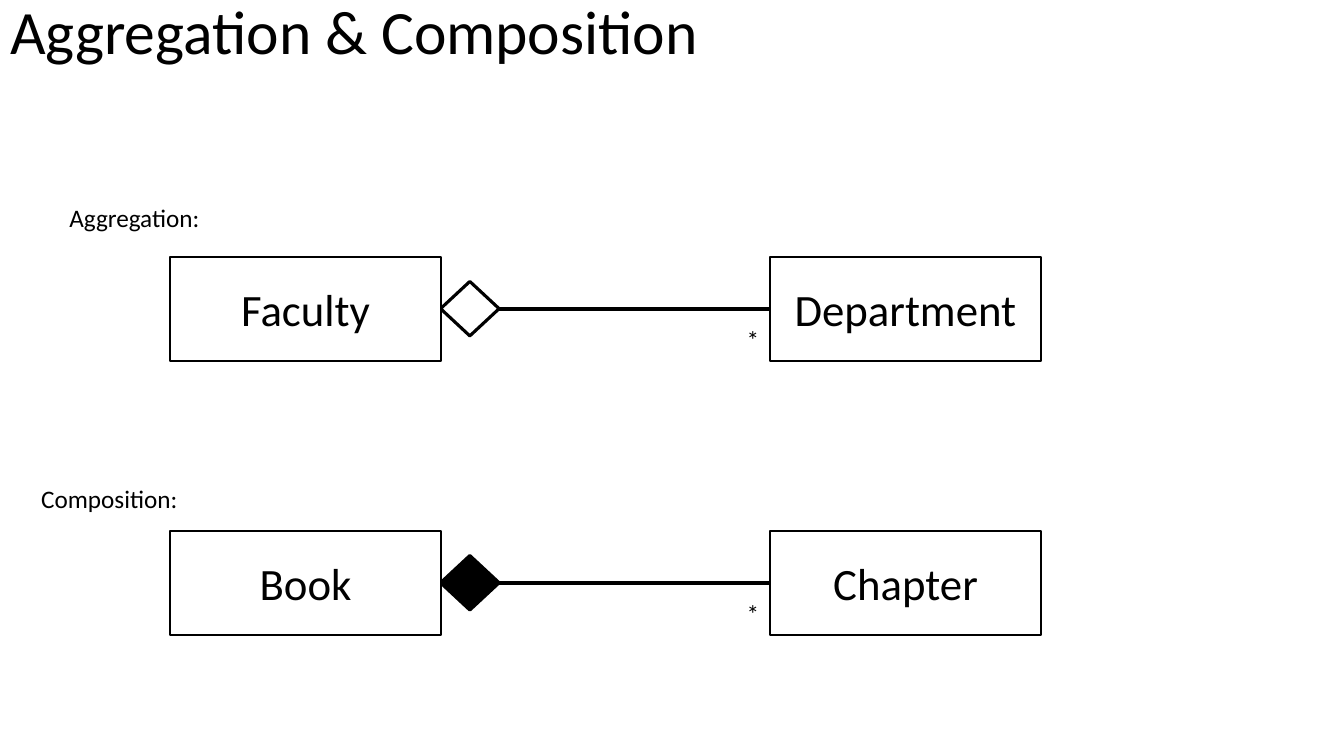
import pptx
import pptx.util
import pptx.oxml
import pptx.dml.color
import pptx.enum.shapes
import pptx.enum.text
from dataclasses import dataclass

Pt = pptx.util.Pt
Kind = pptx.enum.shapes.MSO_SHAPE
Align = pptx.enum.text.PP_ALIGN
Anchor = pptx.enum.text.MSO_ANCHOR
Fit = pptx.enum.text.MSO_AUTO_SIZE
Color = pptx.dml.color.RGBColor


@dataclass
class Theme:
    font: str = "Calibri"
    ink: Color = Color(0, 0, 0)
    paper: Color = Color(255, 255, 255)
    head: int = 44
    name: int = 32
    note: int = 18


class Board:
    def __init__(self, slide, theme):
        self.slide = slide
        self.theme = theme

    def label(self, shape, text, size, align=Align.LEFT):
        shape.text_frame.text = text
        para = shape.text_frame.paragraphs[0]
        para.alignment = align
        font = para.runs[0].font
        font.name, font.size = self.theme.font, Pt(size)
        font.color.rgb = self.theme.ink
        return para

    def title(self, text, left, top, width, height):
        shape = self.slide.shapes.title
        shape.left, shape.top = Pt(left), Pt(top)
        shape.width, shape.height = Pt(width), Pt(height)
        para = self.label(shape, text, self.theme.head)
        para.line_spacing = 0.9
        shape.text_frame.auto_size = Fit.NONE
        shape.text_frame.vertical_anchor = Anchor.MIDDLE

    def shape(self, kind, left, mid, width, height, fill, line):
        """Add a shape whose vertical centre lies at mid."""
        shape = self.slide.shapes.add_shape(
            kind, Pt(left), Pt(mid - height / 2), Pt(width), Pt(height))
        shape.shadow.inherit = False
        if fill is None:
            shape.fill.background()
        else:
            shape.fill.solid()
            shape.fill.fore_color.rgb = fill
        shape.line.color.rgb = self.theme.ink
        shape.line.width = Pt(line)
        return shape

    def entity(self, text, left, mid):
        shape = self.shape(Kind.RECTANGLE, left, mid, BOX_W, BOX_H,
                           self.theme.paper, 1.5)
        self.label(shape, text, self.theme.name, Align.CENTER)
        shape.text_frame.vertical_anchor = Anchor.MIDDLE

    def link(self, start, end, mid):
        line = self.slide.shapes.add_connector(
            pptx.enum.shapes.MSO_CONNECTOR.STRAIGHT,
            Pt(start), Pt(mid), Pt(end), Pt(mid))
        line.line.color.rgb = self.theme.ink
        line.line.width = Pt(3)
        line._element.spPr.append(pptx.oxml.parse_xml(
            '<a:effectLst xmlns:a='
            '"http://schemas.openxmlformats.org/drawingml/2006/main"/>'))

    def note(self, text, left, top, width):
        box = self.slide.shapes.add_textbox(
            Pt(left), Pt(top), Pt(width), Pt(29))
        self.label(box, text, self.theme.note)
        box.text_frame.word_wrap = False
        box.text_frame.auto_size = Fit.SHAPE_TO_FIT_TEXT


BOX_W, BOX_H = 193.7, 74.2
WHOLE, PART = 121.5, 550
GEM_W, GEM_H = 41.8, 38.9
FIRST, PITCH = 220.5, 195.8
STAR_W = 23.8


def main():
    deck = pptx.Presentation()
    deck.slide_width, deck.slide_height = Pt(960), Pt(540)
    theme = Theme()
    board = Board(deck.slides.add_slide(deck.slide_layouts[5]), theme)
    board.title("Aggregation & Composition", 0, -3.6, 828, 56.2)

    # caption, its left, top and width, whole, part, diamond fill
    rows = [
        ("Aggregation:", 42.5, 141, 108.7, "Faculty", "Department", None),
        ("Composition:", 22.3, 342, 113, "Book", "Chapter", theme.ink),
    ]
    gem = WHOLE + BOX_W - 0.5
    for i, (text, left, top, width, whole, part, fill) in enumerate(rows):
        mid = FIRST + i * PITCH
        board.shape(Kind.DIAMOND, gem, mid, GEM_W, GEM_H, fill, 2.25)
        board.entity(whole, WHOLE, mid)
        board.link(gem + GEM_W, PART, mid)
        board.entity(part, PART, mid)
        board.note("*", PART - STAR_W, mid + 7.8, STAR_W)
        board.note(text, left, top, width)

    deck.save("out.pptx")


if __name__ == "__main__":
    main()
